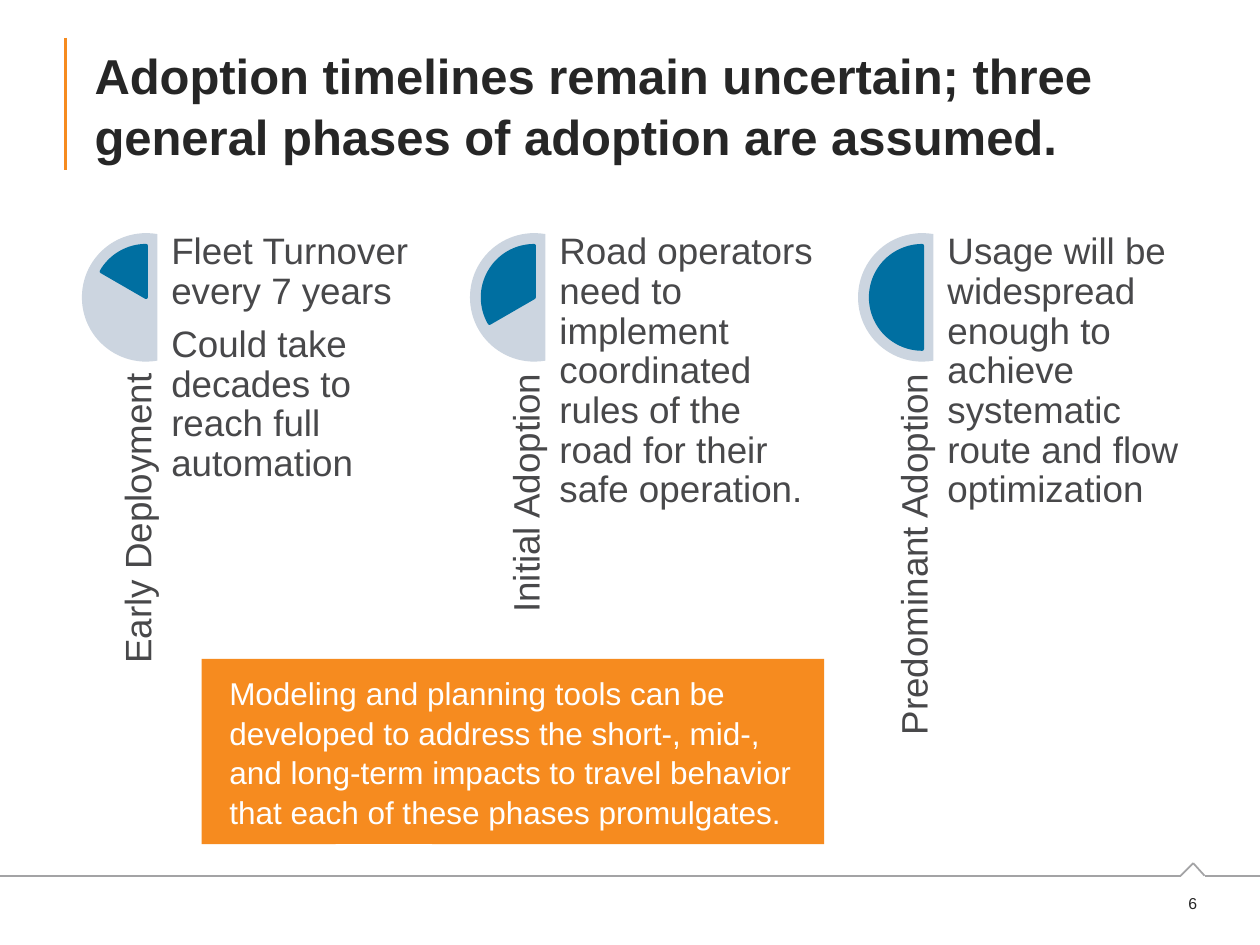
from itertools import pairwise

from lxml import etree
from pptx import Presentation
from pptx.dml.color import RGBColor
from pptx.enum.shapes import MSO_CONNECTOR, MSO_SHAPE
from pptx.enum.text import MSO_ANCHOR, MSO_AUTO_SIZE, PP_ALIGN
from pptx.oxml.ns import qn
from pptx.util import Inches, Pt

STRAIGHT = MSO_CONNECTOR.STRAIGHT
CHORD, PIE, CALLOUT = MSO_SHAPE.CHORD, MSO_SHAPE.PIE, MSO_SHAPE.RECTANGULAR_CALLOUT
TOP, MIDDLE, BOTTOM = MSO_ANCHOR.TOP, MSO_ANCHOR.MIDDLE, MSO_ANCHOR.BOTTOM
LEFT, RIGHT = PP_ALIGN.LEFT, PP_ALIGN.RIGHT
NO_AUTOFIT = MSO_AUTO_SIZE.NONE

FONT = "Arial"
COLORS = {
    "accent": "F68B1F",
    "rule": "A3A3A5",
    "heading": "262626",
    "body": "48484A",
    "dial": "CCD5E0",
    "progress": "006FA1",
    "white": "FFFFFF",
}

TITLE = "Adoption timelines remain uncertain; three general phases of adoption are assumed."
PHASES = [
    ("Early Deployment", 126,
     ["Fleet Turnover every 7 years", "Could take decades to reach full automation"]),
    ("Initial Adoption", 90,
     ["Road operators need to implement coordinated rules of the road for their safe operation."]),
    ("Predominant Adoption", 54,
     ["Usage will be widespread enough to achieve systematic route and flow optimization"]),
]
TAKEAWAY = [
    "Modeling and planning tools can be developed to address the short-, mid-, ",
    "and long-term impacts to travel behavior that each of these phases promulgates.",
]
FOOTER_RULE = [(0, 6.95), (9.37, 6.95), (9.47, 6.85), (9.56, 6.95), (10, 6.95)]
PHASE_LEFT, PHASE_TOP, PHASE_STEP = 0.65, 1.85, 3.08


def rgb(name):
    """Return the palette colour with this name."""
    return RGBColor.from_string(COLORS[name])


def inches(*lengths):
    """Convert several lengths to Inches."""
    return [Inches(length) for length in lengths]


def add_line(slide, start, end, color, width):
    """Draw a straight line without shadow."""
    line = slide.shapes.add_connector(STRAIGHT, *inches(*start, *end))
    line.line.color.rgb = rgb(color)
    line.line.width = Pt(width)
    etree.SubElement(line._element.spPr, qn("a:effectLst"))


def add_filled(slide, preset, box, color, adjustments, outline=None):
    """Add a flat preset shape, with an outline of its own colour if a width is given."""
    shape = slide.shapes.add_shape(preset, *inches(*box))
    for index, value in enumerate(adjustments):
        shape.adjustments[index] = value
    shape.shadow.inherit = False
    shape.fill.solid()
    shape.fill.fore_color.rgb = rgb(color)
    if outline:
        shape.line.color.rgb = rgb(color)
        shape.line.width = Pt(outline)
    else:
        shape.line.fill.background()
    return shape


def add_run(paragraph, text, size, color, bold=False):
    """Append a formatted run to a paragraph."""
    run = paragraph.add_run()
    run.text = text
    run.font.name = FONT
    run.font.size = Pt(size)
    run.font.bold = bold
    run.font.color.rgb = rgb(color)


def add_text(slide, box, paragraphs, size, color, align=LEFT, anchor=TOP, spacing=None):
    """Add a wrapping text box without insets."""
    textbox = slide.shapes.add_textbox(*inches(*box))
    frame = textbox.text_frame
    frame.word_wrap = True
    frame.vertical_anchor = anchor
    frame.margin_left = frame.margin_right = frame.margin_top = frame.margin_bottom = 0
    for index, text in enumerate(paragraphs):
        paragraph = frame.add_paragraph() if index else frame.paragraphs[0]
        paragraph.alignment = align
        paragraph.line_spacing = spacing
        paragraph.space_after = Pt(7.5)
        add_run(paragraph, text, size, color)
    return textbox


def add_title(slide):
    """Place and fill the title placeholder."""
    title = slide.shapes.title
    title.left, title.top, title.width, title.height = inches(0.65, 0.3, 8.85, 1.05)
    frame = title.text_frame
    frame.auto_size = NO_AUTOFIT
    frame.vertical_anchor = MIDDLE
    heading = frame.paragraphs[0]
    heading.alignment = LEFT
    heading.line_spacing = 1.05
    add_run(heading, TITLE, 28, "heading", bold=True)


def add_phase(slide, left, name, start, details):
    """Add a dial with its upright phase name and the details beside it."""
    add_filled(slide, CHORD, (left, PHASE_TOP, 1.02, 1.02), "dial", (48, 168))
    add_filled(slide, PIE, (left + 0.1, PHASE_TOP + 0.1, 0.82, 0.82),
               "progress", (start, 162), outline=2)
    label = add_text(slide, (left - 1.17, 4.14, 2.96, 0.61), [name], 21, "body",
                     RIGHT, BOTTOM, 0.9)
    label.rotation = 270
    add_text(slide, (left + 0.71, PHASE_TOP, 2.04, 4.08), details, 21, "body", spacing=0.9)


def add_takeaway(slide):
    """Add the highlighted conclusion."""
    callout = add_filled(slide, CALLOUT, (1.6, 5.23, 4.94, 1.47), "accent", (-0.205, 0.498))
    frame = callout.text_frame
    frame.word_wrap = True
    frame.vertical_anchor = MIDDLE
    frame.margin_left = Inches(0.22)
    conclusion = frame.paragraphs[0]
    conclusion.alignment = LEFT
    conclusion.line_spacing = 1.05
    for index, text in enumerate(TAKEAWAY):
        if index:
            conclusion.add_line_break()
        add_run(conclusion, text, 18, "white")


def main():
    """Build the slide and save it."""
    deck = Presentation()
    deck.slide_width, deck.slide_height = inches(10, 7.5)
    slide = deck.slides.add_slide(deck.slide_layouts[5])
    add_line(slide, (0.52, 0.3), (0.52, 1.35), "accent", 1.5)
    for start, end in pairwise(FOOTER_RULE):
        add_line(slide, start, end, "rule", 1)
    add_text(slide, (9.25, 7.04, 0.25, 0.25), ["6"], 9, "heading", RIGHT, MIDDLE)
    add_title(slide)
    for index, phase in enumerate(PHASES):
        add_phase(slide, PHASE_LEFT + index * PHASE_STEP, *phase)
    add_takeaway(slide)
    deck.save("out.pptx")


if __name__ == "__main__":
    main()
